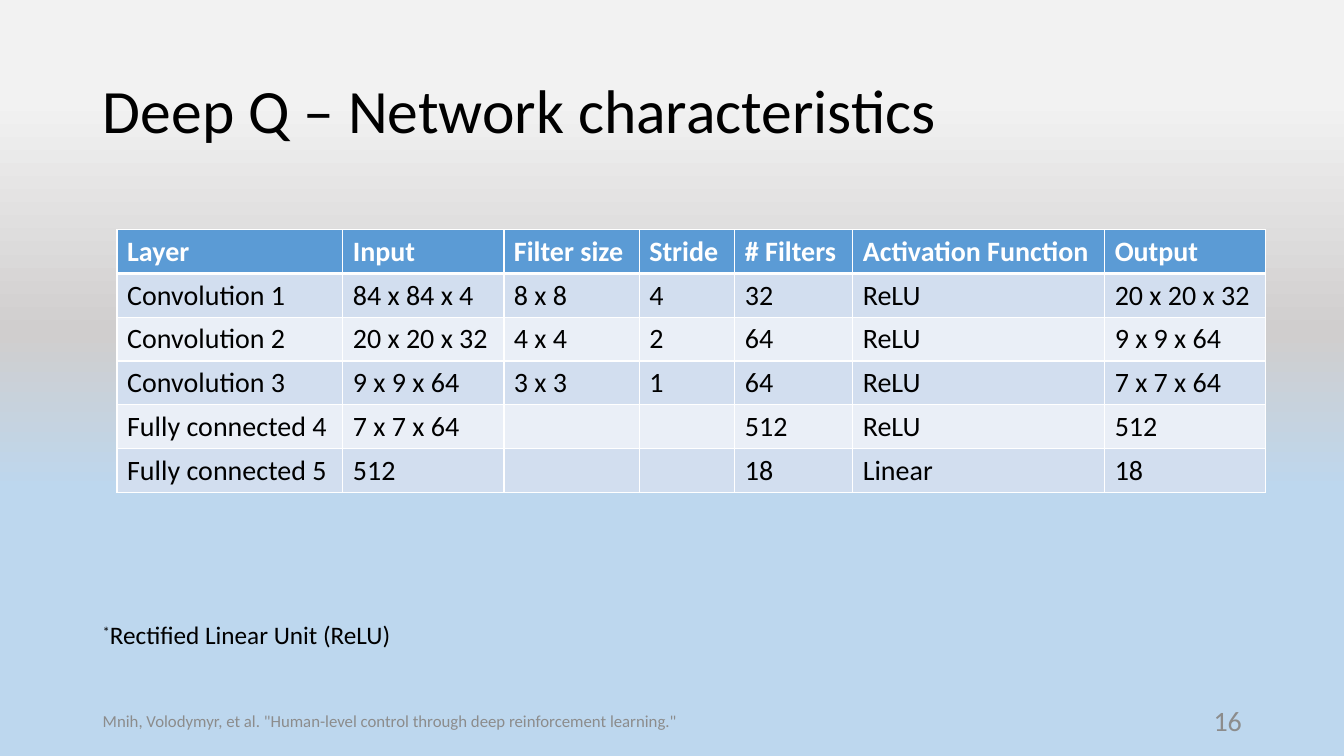
import copy
import lxml.etree
import pptx
import pptx.dml.color
import pptx.enum.text
import pptx.oxml.ns
import pptx.util

Cm, Pt = pptx.util.Cm, pptx.util.Pt
qn = pptx.oxml.ns.qn
FONT = "Calibri"
COLORS = {name: pptx.dml.color.RGBColor.from_string(value) for name, value in {
    "black": "000000", "white": "FFFFFF", "grey": "8C8C8C",
    "header": "5B9BD5", "odd row": "D2DEEF", "even row": "EAEFF7",
    "light": "F2F2F2", "silver": "D0CECE", "sky": "BDD7EE",
}.items()}


def style(paragraph, size, color, bold=False):
    paragraph.font.name = FONT
    paragraph.font.size = Pt(size)
    paragraph.font.bold = bold
    paragraph.font.color.rgb = COLORS[color]


def add_border(cell, side, width):
    line = lxml.etree.SubElement(cell._tc.get_or_add_tcPr(), qn(f"a:ln{side}"), w=str(Pt(width)))
    fill = lxml.etree.SubElement(line, qn("a:solidFill"))
    lxml.etree.SubElement(fill, qn("a:srgbClr"), val=str(COLORS["white"]))


presentation = pptx.Presentation()
presentation.slide_width = Cm(33.87)
presentation.slide_height = Cm(19.05)
slide = presentation.slides.add_slide(presentation.slide_layouts[5])

# Background gradient, top to bottom
background = slide.background.fill
background.gradient()
background.gradient_angle = 270
stop_list = next(slide.element.iter(qn("a:gsLst")))
for _ in range(2):
    stop_list.append(copy.deepcopy(stop_list[0]))
stops = [(0.13, "light"), (0.44, "silver"), (0.65, "sky"), (0.8, "sky")]
for stop, (position, color) in zip(background.gradient_stops, stops):
    stop.position = position
    stop.color.rgb = COLORS[color]

# Title
title = slide.shapes.title
title.left, title.top, title.width, title.height = Cm(2.34), Cm(1.02), Cm(29.21), Cm(3.68)
title.text_frame.text = "Deep Q – Network characteristics"
title.text_frame.vertical_anchor = pptx.enum.text.MSO_ANCHOR.MIDDLE
paragraph = title.text_frame.paragraphs[0]
paragraph.alignment = pptx.enum.text.PP_ALIGN.LEFT
paragraph.line_spacing = 0.9
style(paragraph, 44, "black")

# Source and slide number
footers = [
    (2.34, 20.32, 12, "LEFT",
     'Mnih, Volodymyr, et al. "Human-level control through deep reinforcement learning."'),
    (23.93, 7.62, 20, "RIGHT", "16"),
]
for left, width, size, alignment, text in footers:
    footer = slide.shapes.add_textbox(Cm(left), Cm(17.65), Cm(width), Cm(1.02))
    footer.text_frame.word_wrap = True
    footer.text_frame.vertical_anchor = pptx.enum.text.MSO_ANCHOR.MIDDLE
    footer.text_frame.text = text
    paragraph = footer.text_frame.paragraphs[0]
    paragraph.alignment = pptx.enum.text.PP_ALIGN[alignment]
    style(paragraph, size, "grey")

# Table of network layers
rows = [
    ["Layer", "Input", "Filter size", "Stride", "# Filters", "Activation Function", "Output"],
    ["Convolution 1", "84 x 84 x 4", "8 x 8", "4", "32", "ReLU", "20 x 20 x 32"],
    ["Convolution 2", "20 x 20 x 32", "4 x 4", "2", "64", "ReLU", "9 x 9 x 64"],
    ["Convolution 3", "9 x 9 x 64", "3 x 3", "1", "64", "ReLU", "7 x 7 x 64"],
    ["Fully connected 4", "7 x 7 x 64", "", "", "512", "ReLU", "512"],
    ["Fully connected 5", "512", "", "", "18", "Linear", "18"],
]
column_widths = [5.69, 4.06, 3.41, 2.41, 2.97, 6.35, 4.06]
table = slide.shapes.add_table(
    len(rows), len(column_widths), Cm(2.95), Cm(5.79), Cm(sum(column_widths)), Cm(6.6)).table
for column, width in zip(table.columns, column_widths):
    column.width = Cm(width)
for row_index, row in enumerate(rows):
    is_header = row_index == 0
    fill = "header" if is_header else "odd row" if row_index % 2 else "even row"
    for column_index, text in enumerate(row):
        cell = table.cell(row_index, column_index)
        cell.text = text
        style(cell.text_frame.paragraphs[0], 20, "white" if is_header else "black", is_header)
        for side in "LRTB":
            below_header = (row_index, side) in [(0, "B"), (1, "T")]
            add_border(cell, side, 3 if below_header else 1)
        cell.fill.solid()
        cell.fill.fore_color.rgb = COLORS[fill]

# Footnote with a raised asterisk
footnote = slide.shapes.add_textbox(Cm(2.34), Cm(15.49), Cm(7.9), Cm(1.02))
footnote.text_frame.word_wrap = False
footnote.text_frame.auto_size = pptx.enum.text.MSO_AUTO_SIZE.SHAPE_TO_FIT_TEXT
paragraph = footnote.text_frame.paragraphs[0]
style(paragraph, 18, "black")
asterisk = paragraph.add_run()
asterisk.text = "*"
asterisk.font._element.set("baseline", "30000")
paragraph.add_run().text = "Rectified Linear Unit (ReLU)"

presentation.save("out.pptx")
